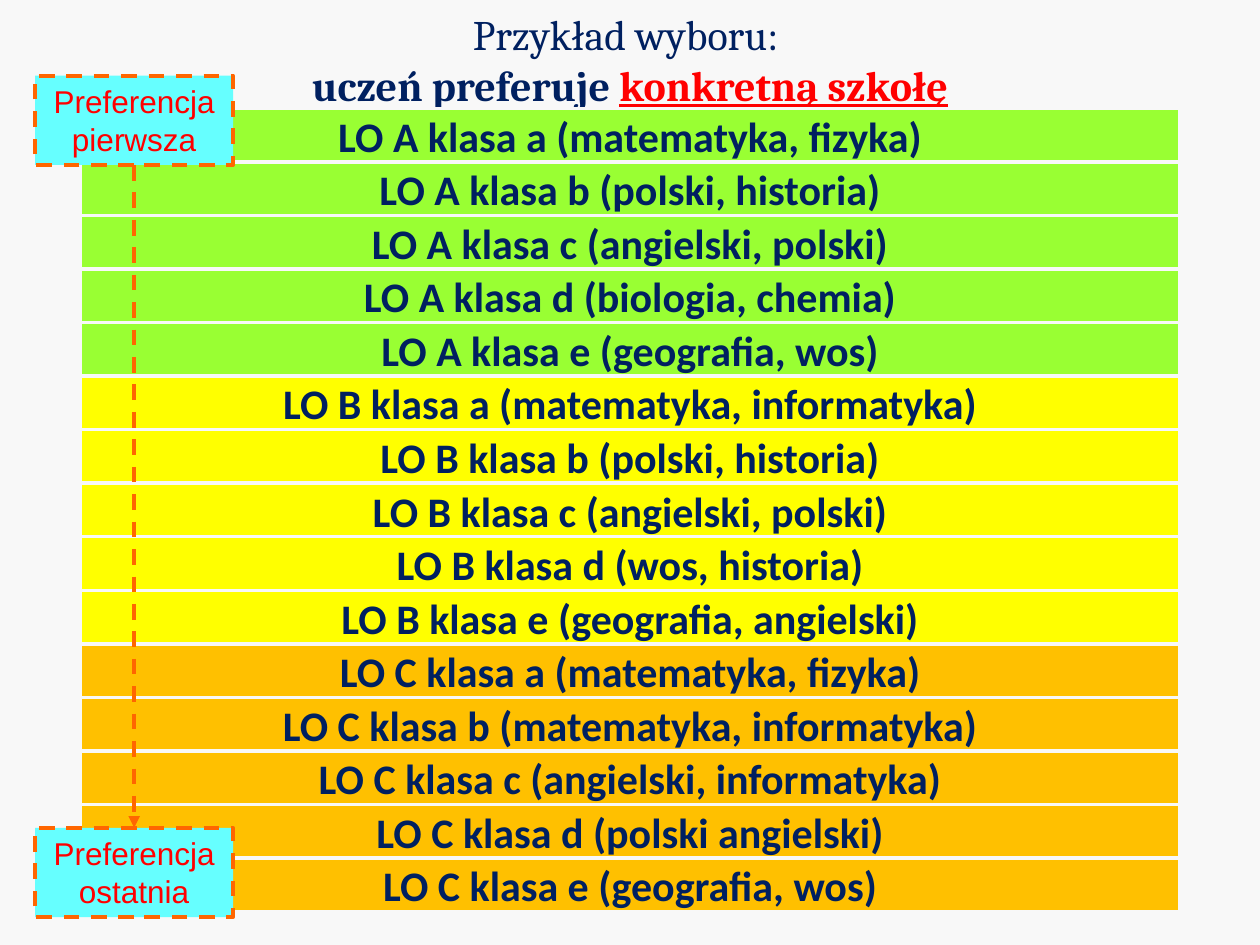
from lxml.etree import SubElement
from pptx import Presentation
from pptx.dml.color import RGBColor
from pptx.enum.dml import MSO_LINE as Dash
from pptx.enum.shapes import MSO_CONNECTOR as Conn, MSO_SHAPE as Kind
from pptx.enum.text import MSO_ANCHOR as Anchor, MSO_AUTO_SIZE as Fit, PP_ALIGN as Align
from pptx.oxml.ns import qn
from pptx.util import Inches, Pt

COLORS = {
    "back": "F8F8F8", "navy": "002060", "red": "FF0000", "orange": "FF6600",
    "cyan": "66FFFF", "A": "99FF33", "B": "FFFF00", "C": "FFC000",
}
SCHOOLS = {
    "A": ["matematyka, fizyka", "polski, historia", "angielski, polski",
          "biologia, chemia", "geografia, wos"],
    "B": ["matematyka, informatyka", "polski, historia", "angielski, polski",
          "wos, historia", "geografia, angielski"],
    "C": ["matematyka, fizyka", "matematyka, informatyka", "angielski, informatyka",
          "polski angielski", "geografia, wos"],
}
HEAD = {"name": "Cambria", "size": Pt(24), "bold": False}
ROW = {"name": "Calibri", "size": Pt(24), "bold": True}
TAG = {"name": "Arial", "size": Pt(18), "bold": False}


def rgb(name):
    return RGBColor.from_string(COLORS[name])


def assign(item, values):
    for key, value in values.items():
        setattr(item, key, value)


def write(para, text, style, color):
    run = para.add_run()
    run.text = text
    assign(run.font, style)
    run.font.color.rgb = rgb(color)
    para.alignment = Align.CENTER
    return run


def stroke(line, color, width, dash=None):
    line.color.rgb = rgb(color)
    line.width = Pt(width)
    if dash:
        line.dash_style = dash


def block(shapes, box, fill, text, style, color):
    shape = shapes.add_shape(Kind.RECTANGLE, *map(Inches, box))
    shape.shadow.inherit = False
    shape.fill.solid()
    shape.fill.fore_color.rgb = rgb(fill)
    shape.text_frame.word_wrap = True
    write(shape.text_frame.paragraphs[0], text, style, color)
    return shape


def add_title(slide, box):
    title = slide.shapes.title
    assign(title, dict(zip(("left", "top", "width", "height"), map(Inches, box))))
    frame = title.text_frame
    assign(frame, {"word_wrap": True, "auto_size": Fit.NONE, "vertical_anchor": Anchor.TOP})
    write(frame.paragraphs[0], "Przykład wyboru: ", HEAD, "navy")
    para = frame.add_paragraph()
    bold = HEAD | {"bold": True}
    write(para, "uczeń preferuje ", bold, "navy")
    write(para, "konkretną szkołę", bold | {"underline": True}, "red")


def add_rows(slide, box):
    left, top, width, height = box
    rows = [(school, f"LO {school} klasa {mark} ({topics})")
            for school, classes in SCHOOLS.items()
            for mark, topics in zip("abcde", classes)]
    tall = 0.43
    step = (height - tall) / (len(rows) - 1)
    shapes = slide.shapes.add_group_shape().shapes
    for i, (school, text) in enumerate(rows):
        row = block(shapes, (left, top + i * step, width, tall), school, text, ROW, "navy")
        stroke(row.line, "back", 2)
        assign(row.text_frame, {"margin_left": 0, "margin_right": 0, "margin_top": 0,
                                "margin_bottom": 0, "vertical_anchor": Anchor.MIDDLE})


def add_scale(slide, box):
    left, top, width, height = box
    tall = 0.71
    shapes = slide.shapes.add_group_shape().shapes
    ends = []
    for y, word in ((top, "pierwsza"), (top + height - tall, "ostatnia")):
        tag = block(shapes, (left, y, width, tall), "cyan", f"Preferencja {word}", TAG, "red")
        stroke(tag.line, "orange", 2.25, Dash.DASH)
        assign(tag.text_frame, {"auto_size": Fit.SHAPE_TO_FIT_TEXT,
                                "vertical_anchor": Anchor.TOP})
        ends.append(tag)
    arrow = shapes.add_connector(Conn.STRAIGHT, 0, 0, 0, 0)
    arrow.begin_connect(ends[0], 2)
    arrow.end_connect(ends[1], 0)
    stroke(arrow.line, "orange", 2.25, Dash.DASH)
    props = arrow.element.spPr
    SubElement(props.find(qn("a:ln")), qn("a:tailEnd"), type="triangle")
    SubElement(props, qn("a:effectLst"))


def main():
    deck = Presentation()
    deck.slide_width, deck.slide_height = Inches(10), Inches(7.5)
    slide = deck.slides.add_slide(deck.slide_layouts[5])
    slide.background.fill.solid()
    slide.background.fill.fore_color.rgb = rgb("back")
    add_title(slide, (0, 0.02, 10, 0.78))
    add_rows(slide, (0.64, 0.86, 8.72, 6.38))
    add_scale(slide, (0.28, 0.6, 1.57, 6.68))
    deck.save("out.pptx")


if __name__ == "__main__":
    main()
